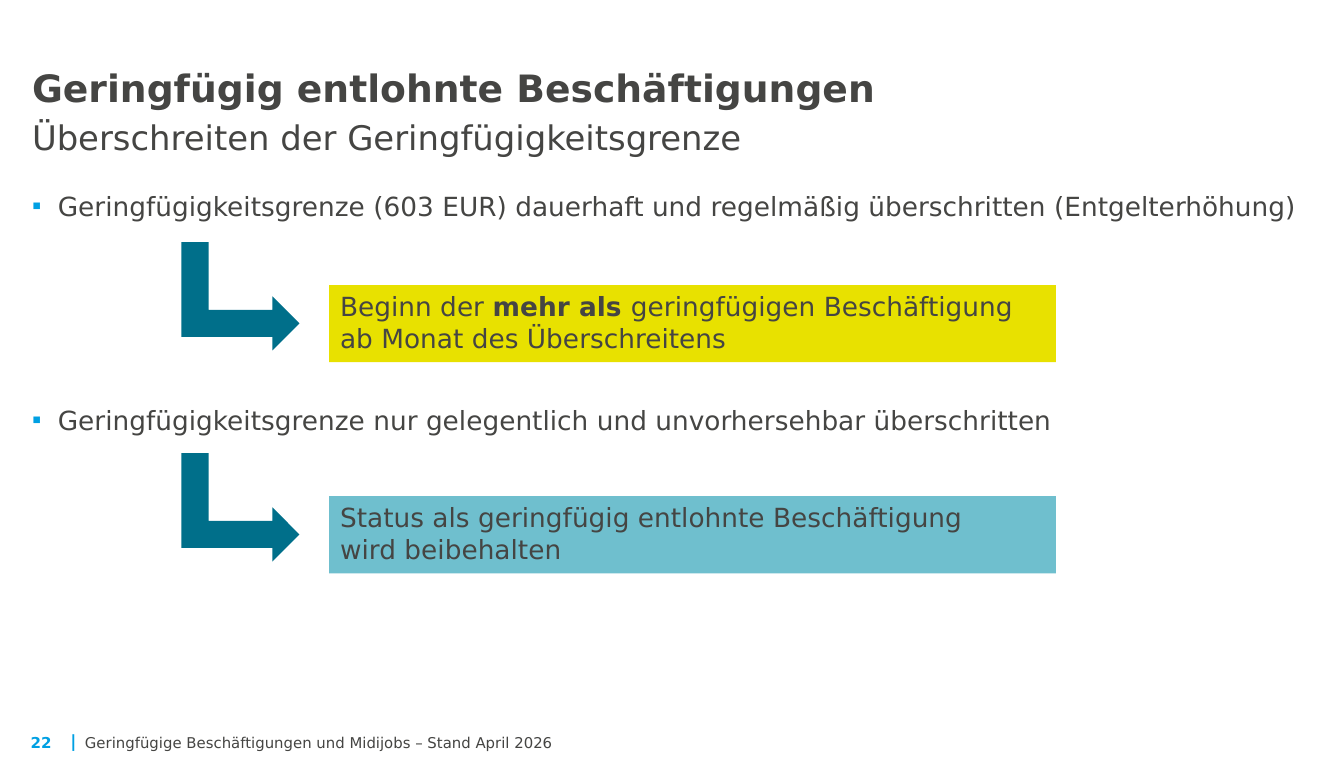
import lxml.etree
import pptx
import pptx.dml.color
import pptx.enum.shapes
import pptx.enum.text
import pptx.oxml.ns
import pptx.util

COLORS = {"text": "454543", "accent": "00A0E3", "arrow": "006F8A", "yellow": "E8E100", "teal": "6FBFCE"}

presentation = pptx.Presentation()
presentation.slide_width = pptx.util.Pt(714.33)
presentation.slide_height = pptx.util.Pt(405)
column = presentation.slide_width / 100
row = presentation.slide_height / 100
slide = presentation.slides.add_slide(presentation.slide_layouts[1])


def grid(left, top, width, height):
    return [round(length) for length in (left * column, top * row, width * column, height * row)]


def style(paragraph, size, color="text", bold=False):
    paragraph.alignment = pptx.enum.text.PP_ALIGN.LEFT
    paragraph.font.name = "DejaVu Sans"
    paragraph.font.size = pptx.util.Pt(size)
    paragraph.font.bold = bold
    paragraph.font.color.rgb = pptx.dml.color.RGBColor.from_string(COLORS[color])


title = slide.shapes.title
body = slide.placeholders[1]
for placeholder, area, anchor in [
    (title, (2.38, 8, 85.79, 12.6), pptx.enum.text.MSO_ANCHOR.BOTTOM),
    (body, (2.38, 24.9, 95.26, 67.2), pptx.enum.text.MSO_ANCHOR.TOP),
]:
    placeholder.left, placeholder.top, placeholder.width, placeholder.height = grid(*area)
    frame = placeholder.text_frame
    frame.margin_left = frame.margin_top = frame.margin_right = frame.margin_bottom = 0
    frame.vertical_anchor = anchor
    frame.auto_size = pptx.enum.text.MSO_AUTO_SIZE.NONE
    frame.word_wrap = True

paragraph = title.text_frame.paragraphs[0]
heading = paragraph.add_run()
heading.text = "Geringfügig entlohnte Beschäftigungen"
heading.font.bold = True
heading.font.size = pptx.util.Pt(20)
paragraph.add_line_break()
subheading = paragraph.add_run()
subheading.text = "Überschreiten der Geringfügigkeitsgrenze"
style(paragraph, 18)
paragraph.line_spacing = pptx.util.Pt(24.8)

body.text_frame.text = (
    "Geringfügigkeitsgrenze (603 EUR) dauerhaft und regelmäßig überschritten (Entgelterhöhung)\n"
    "Geringfügigkeitsgrenze nur gelegentlich und unvorhersehbar überschritten"
)
for paragraph, space_before in zip(body.text_frame.paragraphs, (0, 91)):
    properties = paragraph._p.get_or_add_pPr()
    properties.set("marL", str(pptx.util.Inches(0.19)))
    properties.set("indent", str(-pptx.util.Inches(0.19)))
    bullet_color = lxml.etree.SubElement(properties, pptx.oxml.ns.qn("a:buClr"))
    lxml.etree.SubElement(bullet_color, pptx.oxml.ns.qn("a:srgbClr"), val=COLORS["accent"])
    lxml.etree.SubElement(properties, pptx.oxml.ns.qn("a:buChar"), char="▪")
    style(paragraph, 14)
    paragraph.space_before = pptx.util.Pt(space_before)
    paragraph.space_after = pptx.util.Pt(6)

consequences = [
    ("yellow", [("Beginn der ", False), ("mehr als ", True),
                ("geringfügigen Beschäftigung \vab Monat des Überschreitens", False)]),
    ("teal", [("Status als geringfügig entlohnte Beschäftigung \vwird beibehalten", False)]),
]
for index, (color, parts) in enumerate(consequences):
    offset = index * 27.7
    arrow = slide.shapes.add_shape(
        pptx.enum.shapes.MSO_SHAPE.BENT_UP_ARROW, *grid(13.86, 31.15, 8.06, 15.48))
    arrow.top += round(offset * row)
    arrow.rotation = 90
    box = slide.shapes.add_shape(
        pptx.enum.shapes.MSO_SHAPE.RECTANGLE, *grid(24.5, 37.4 + offset, 54.07, 10.14))
    for shape, fill in ((arrow, "arrow"), (box, color)):
        shape.shadow.inherit = False
        shape.fill.solid()
        shape.fill.fore_color.rgb = pptx.dml.color.RGBColor.from_string(COLORS[fill])
        shape.line.fill.background()
    frame = box.text_frame
    frame.word_wrap = True
    frame.margin_left = frame.margin_right = pptx.util.Inches(0.08)
    frame.margin_top = frame.margin_bottom = pptx.util.Inches(0.04)
    frame.vertical_anchor = pptx.enum.text.MSO_ANCHOR.TOP
    paragraph = frame.paragraphs[0]
    style(paragraph, 14)
    for part, bold in parts:
        for position, line in enumerate(part.split("\v")):
            if position:
                paragraph.add_line_break()
            run = paragraph.add_run()
            run.text = line
            if bold:
                run.font.bold = True

footer = [
    ("|", (5.24, 95.9, 0.6, 2.67), 0, 0, 8.9, "accent", True),
    ("Geringfügige Beschäftigungen und Midijobs – Stand April 2026",
     (6.32, 95.9, 91.33, 2.67), 0, 0, 7.9, "text", False),
    ("22", (1.28, 95.2, 3.63, 4.27), 0.1, 0.05, 8, "accent", True),
]
for text, area, side_margin, edge_margin, size, color, bold in footer:
    frame = slide.shapes.add_textbox(*grid(*area)).text_frame
    frame.margin_left = frame.margin_right = pptx.util.Inches(side_margin)
    frame.margin_top = frame.margin_bottom = pptx.util.Inches(edge_margin)
    frame.vertical_anchor = pptx.enum.text.MSO_ANCHOR.BOTTOM
    frame.word_wrap = True
    frame.text = text
    style(frame.paragraphs[0], size, color, bold)

presentation.save("out.pptx")
